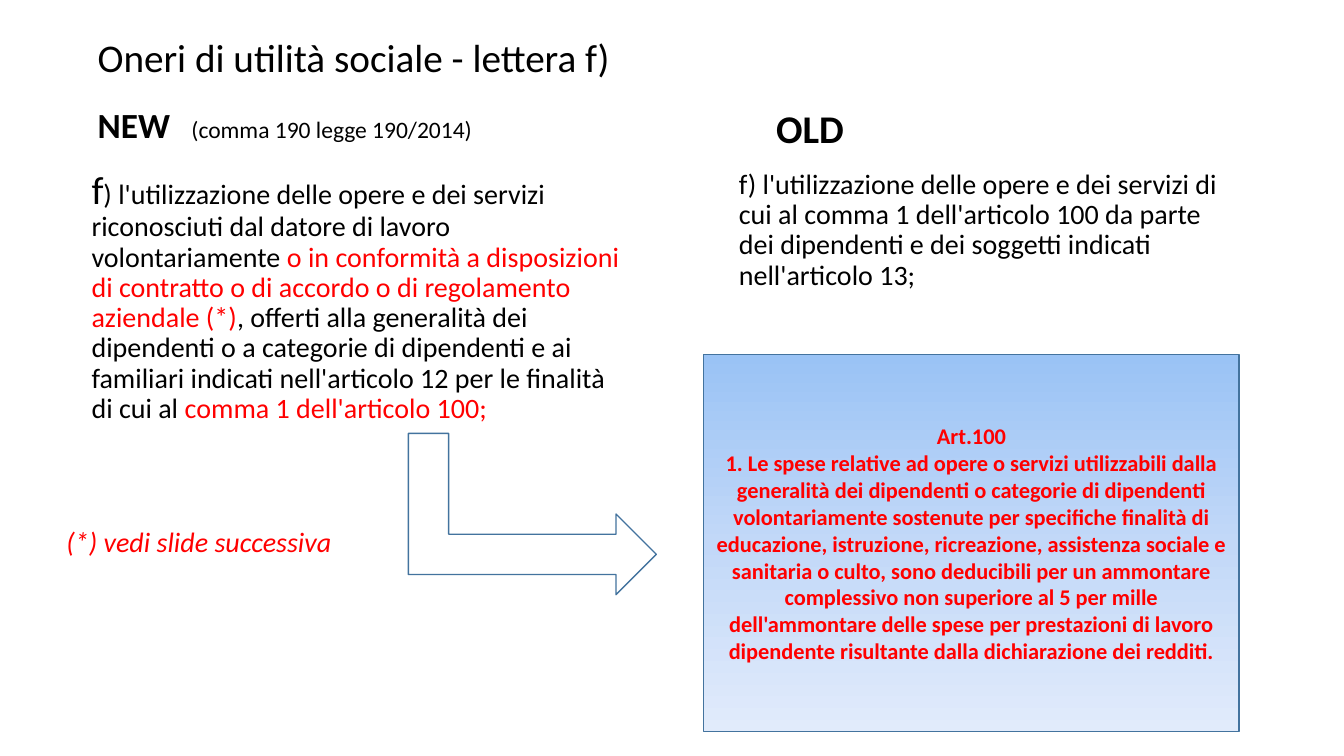
from copy import deepcopy

from pptx import Presentation
from pptx.dml.color import RGBColor
from pptx.enum.shapes import MSO_SHAPE as Preset
from pptx.enum.text import MSO_ANCHOR as Anchor, PP_ALIGN as Align
from pptx.oxml.ns import qn
from pptx.oxml.xmlchemy import OxmlElement
from pptx.util import Inches, Pt

FONT, BLACK, RED, OUTLINE = "Calibri", "000000", "FF0000", "43739E"
GRADIENT = [(0, "9AC3F5"), (0.5, "C2D8F8"), (1, "E1EBFB")]
INDENT, COMMA_TAB = 0.25, 0.93
FOOTNOTE_GAP = 74

# A run is (text, size, colour, bold, italic).
TITLE = [("Oneri di utilità sociale - lettera f)", 28, BLACK, False, False)]
NEW_HEADING = [
    ("NEW", 25.2, BLACK, True, False),
    ("\t(comma 190 legge 190/2014)", 16.8, BLACK, False, False),
]
NEW_TEXT = [
    ("f", 28, BLACK, False, False),
    (") l'utilizzazione delle opere e dei servizi riconosciuti dal datore di "
     "lavoro volontariamente ", 20, BLACK, False, False),
    ("o in conformità a disposizioni di contratto o di accordo o di "
     "regolamento aziendale (*)", 20, RED, False, False),
    (", offerti alla generalità dei dipendenti o a categorie di dipendenti e "
     "ai familiari indicati nell'articolo 12 per le finalità di cui al ",
     20, BLACK, False, False),
    ("comma 1 dell'articolo 100;", 20, RED, False, False),
]
FOOTNOTE = [("(*) vedi slide successiva", 20, RED, False, True)]
OLD_HEADING = [("OLD", 28, BLACK, True, False)]
OLD_TEXT = [
    ("f) l'utilizzazione delle opere e dei servizi di cui al comma 1 "
     "dell'articolo 100 da parte dei dipendenti e dei soggetti indicati "
     "nell'articolo 13;", 20, BLACK, False, False),
]
ARTICLE = [
    [("Art.100", 16, RED, True, False)],
    [("1. Le spese relative ad opere o servizi utilizzabili dalla generalità "
      "dei dipendenti o categorie di dipendenti volontariamente sostenute per "
      "specifiche finalità di educazione, istruzione, ricreazione, assistenza "
      "sociale e sanitaria o culto, sono deducibili per un ammontare "
      "complessivo non superiore al 5 per mille dell'ammontare delle spese "
      "per prestazioni di lavoro dipendente risultante dalla dichiarazione "
      "dei redditi.", 16, RED, True, False)],
]

# (left, top, width, height), anchor, line spacing, paragraphs
TEXT_BOXES = [
    ((0.87, 0.05, 11.35, 1.09), Anchor.MIDDLE, 0.9, [TITLE]),
    ((0.87, 0.95, 4.02, 0.53), Anchor.BOTTOM, 0.7, [NEW_HEADING]),
    ((0.56, 1.64, 5.8, 5.86), Anchor.TOP, 0.9, [NEW_TEXT, FOOTNOTE]),
    ((7.6, 0.86, 4.06, 0.7), Anchor.BOTTOM, 0.9, [OLD_HEADING]),
    ((6.98, 1.64, 5.31, 5.16), Anchor.TOP, 0.9, [OLD_TEXT]),
]
ARTICLE_BOX = (6.98, 3.52, 5.31, 3.74)
ARROW_BOX = (4.48, 3.87, 1.6, 2.46)


def rgb(colour):
    return RGBColor.from_string(colour)


def inches(box):
    return [Inches(length) for length in box]


def write(shape, paragraphs, anchor, spacing=1.0, align=Align.LEFT):
    frame = shape.text_frame
    frame.word_wrap = True
    frame.vertical_anchor = anchor
    for number, runs in enumerate(paragraphs):
        paragraph = frame.add_paragraph() if number else frame.paragraphs[0]
        paragraph.alignment = align
        paragraph.line_spacing = spacing
        properties = paragraph._p.get_or_add_pPr()
        if runs is FOOTNOTE:
            paragraph.space_before = Pt(FOOTNOTE_GAP)
        elif runs in (NEW_TEXT, OLD_TEXT):
            properties.set("marL", str(Inches(INDENT)))
        elif runs is NEW_HEADING:
            tabs = OxmlElement("a:tabLst")
            tab = OxmlElement("a:tab")
            tab.set("pos", str(Inches(COMMA_TAB)))
            tab.set("algn", "l")
            tabs.append(tab)
            properties.append(tabs)
        for text, size, colour, bold, italic in runs:
            run = paragraph.add_run()
            run.text = text
            run.font.name = FONT
            run.font.size = Pt(size)
            run.font.bold = bold
            run.font.italic = italic
            run.font.color.rgb = rgb(colour)


def add_outlined(slide, preset, box):
    shape = slide.shapes.add_shape(preset, *inches(box))
    shape.shadow.inherit = False
    shape.line.color.rgb = rgb(OUTLINE)
    shape.line.width = Pt(1)
    return shape


def fill_gradient(shape):
    shape.fill.gradient()
    shape.fill.gradient_angle = 270
    stop_list = shape._element.spPr.find(qn("a:gradFill")).find(qn("a:gsLst"))
    while len(stop_list) < len(GRADIENT):
        stop_list.append(deepcopy(stop_list[0]))
    for stop, (position, colour) in zip(shape.fill.gradient_stops, GRADIENT):
        stop.position = position
        stop.color.rgb = rgb(colour)


def main():
    presentation = Presentation()
    presentation.slide_width = Inches(13.33)
    presentation.slide_height = Inches(7.5)
    slide = presentation.slides.add_slide(presentation.slide_layouts[6])

    for box, anchor, spacing, paragraphs in TEXT_BOXES:
        write(slide.shapes.add_textbox(*inches(box)), paragraphs, anchor, spacing)

    article = add_outlined(slide, Preset.RECTANGLE, ARTICLE_BOX)
    fill_gradient(article)
    write(article, ARTICLE, Anchor.MIDDLE, align=Align.CENTER)

    arrow = add_outlined(slide, Preset.BENT_UP_ARROW, ARROW_BOX)
    arrow.rotation = 90
    arrow.fill.background()

    presentation.save("out.pptx")


if __name__ == "__main__":
    main()
